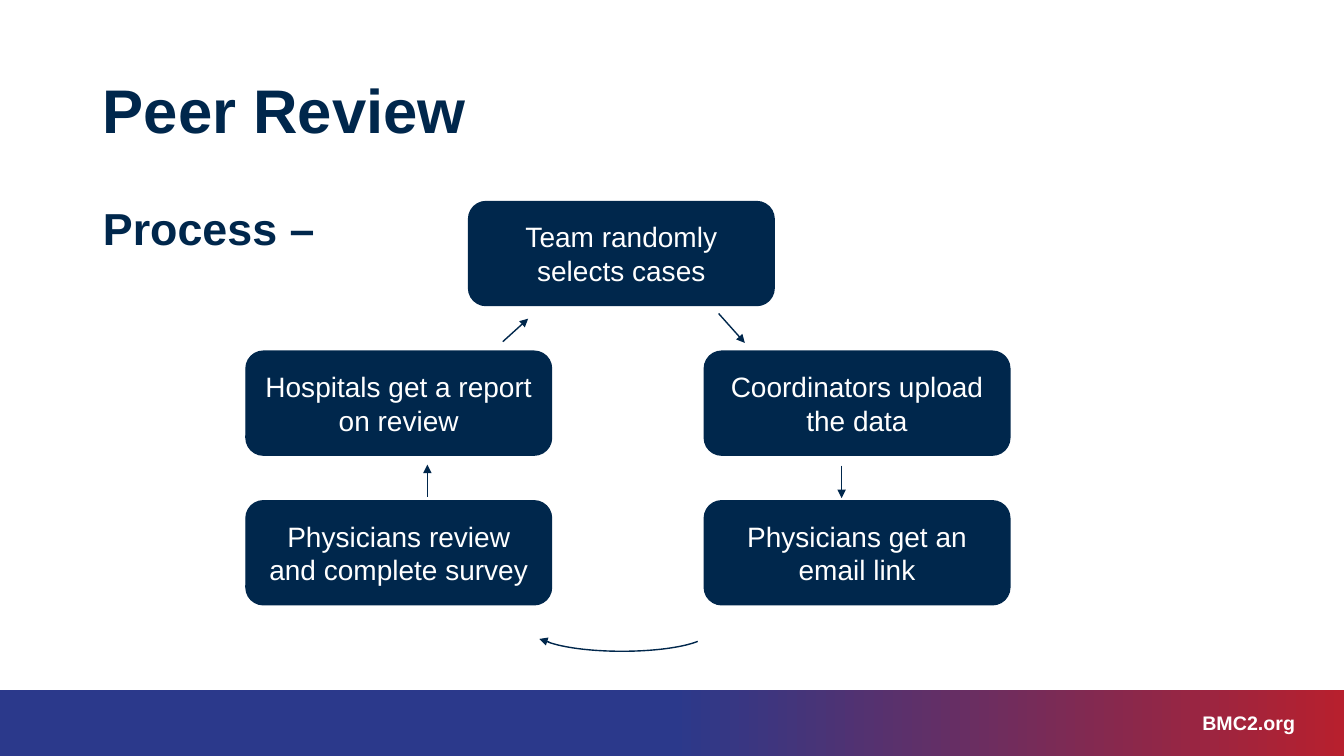
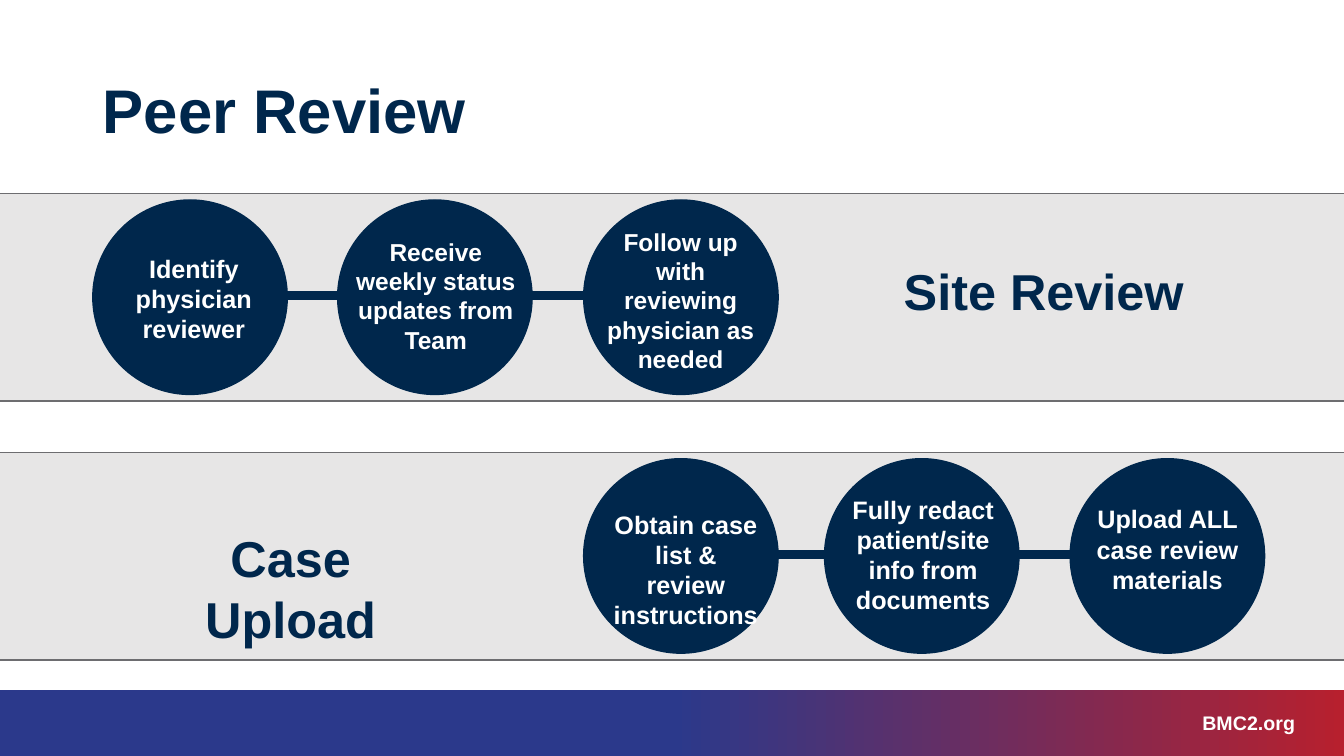
from dataclasses import dataclass
from itertools import pairwise

from lxml.etree import SubElement
from pptx import Presentation
from pptx.dml.color import RGBColor
from pptx.enum.shapes import MSO_CONNECTOR, MSO_SHAPE
from pptx.enum.text import MSO_ANCHOR, MSO_AUTO_SIZE, PP_ALIGN
from pptx.oxml.ns import qn
from pptx.util import Cm, Pt

# Shared style
FONT = "Arial"
NAVY, WHITE = "00274C", "FFFFFF"
BAND_BLUE, BAND_RED = "2B398B", "B7202E"
STRIP_FILL, STRIP_LINE = "E7E6E6", "6D6D70"
PAGE_WIDTH, PAGE_HEIGHT = 33.87, 19.05
BAND_TOP = 17.4
DIAMETER = 4.9


@dataclass(frozen=True)
class Area:
    """A rectangle in centimetres."""
    left: float
    top: float
    width: float
    height: float

    def lengths(self) -> tuple:
        return Cm(self.left), Cm(self.top), Cm(self.width), Cm(self.height)


@dataclass(frozen=True)
class Step:
    """A process circle and the place of its caption."""
    left: float
    text: str
    caption: Area
    size: float = 18


@dataclass(frozen=True)
class Strip:
    """A grey strip with a heading and linked circles."""
    top: float
    heading: str
    heading_area: Area
    steps: tuple[Step, ...]


TITLE_AREA = Area(2.34, 1.02, 29.21, 3.68)
BODY_AREA = Area(2.34, 5.08, 29.21, 12.09)

# Cycle on the first slide
BOX_WIDTH, BOX_HEIGHT = 7.7, 2.62
LEFT_COLUMN, MIDDLE_COLUMN, RIGHT_COLUMN = 6.2, 11.81, 17.75
FIRST_ROW, ROW_PITCH = 5.08, 3.77
CYCLE = (
    (MIDDLE_COLUMN, 0, "Team randomly selects cases"),
    (RIGHT_COLUMN, 1, "Coordinators upload the data"),
    (RIGHT_COLUMN, 2, "Physicians get an email link"),
    (LEFT_COLUMN, 2, "Physicians review and complete survey"),
    (LEFT_COLUMN, 1, "Hospitals get a report on review"),
)
ARROWS = (
    (18.11, 7.9, 18.77, 8.64),
    (12.67, 8.61, 13.31, 8.03),
    (21.21, 11.73, 21.21, 12.55),
    (10.77, 12.52, 10.77, 11.71),
    (13.84, 16.18, 13.59, 16.1),
)

# Strips on the second slide
STRIPS = (
    Strip(4.88, "Site Review", Area(22.23, 6.43, 8.15, 1.8), (
        Step(2.34, "Identify physician reviewer",
             Area(2.69, 6.25, 4.39, 2.57)),
        Step(8.51, "Receive weekly status updates from Team",
             Area(8.66, 5.84, 4.65, 3.25), 17.5),
        Step(14.71, "Follow up with reviewing physician as needed",
             Area(14.83, 5.59, 4.65, 3.99), 17.5),
    )),
    Strip(11.4, "Case Upload", Area(3.25, 13.16, 8.15, 1.8), (
        Step(14.71, "Obtain case list & review instructions",
             Area(15.19, 12.7, 4.19, 2.57)),
        Step(20.78, "Fully redact patient/site info from documents",
             Area(20.93, 12.32, 4.67, 3.33)),
        Step(26.97, "Upload ALL case review materials",
             Area(27.25, 12.57, 4.34, 2.57)),
    )),
)


def color(value: str) -> RGBColor:
    return RGBColor.from_string(value)


def write(box, text: str, *, size: float, fill: str = NAVY, bold: bool = False,
          align=PP_ALIGN.LEFT, anchor=MSO_ANCHOR.TOP, spacing: float = 1.0,
          plain: bool = False) -> None:
    """Fill a shape with one formatted paragraph; plain removes the bullet."""
    frame = box.text_frame
    frame.word_wrap = True
    frame.auto_size = MSO_AUTO_SIZE.NONE
    frame.vertical_anchor = anchor
    para = frame.paragraphs[0]
    para.alignment = align
    para.line_spacing = spacing
    para.space_before = Pt(0)
    if plain:
        properties = para._p.get_or_add_pPr()
        properties.set("marL", "0")
        properties.set("indent", "0")
        SubElement(properties, qn("a:buNone"))
    span = para.add_run()
    span.text = text
    span.font.name = FONT
    span.font.size = Pt(size)
    span.font.bold = bold
    span.font.color.rgb = color(fill)


def add_block(page, kind, area: Area, fill: str = NAVY, line: str = NAVY):
    block = page.shapes.add_shape(kind, *area.lengths())
    block.shadow.inherit = False
    block.fill.solid()
    block.fill.fore_color.rgb = color(fill)
    block.line.color.rgb = color(line)
    block.line.width = Pt(1)
    return block


def add_label(page, area: Area, text: str, **style):
    label = page.shapes.add_textbox(*area.lengths())
    write(label, text, **style)
    return label


def fill_placeholder(box, area: Area, text: str, **style) -> None:
    box.left, box.top, box.width, box.height = area.lengths()
    write(box, text, bold=True, spacing=0.9, **style)


def add_arrow(page, *ends: float) -> None:
    arrow = page.shapes.add_connector(
        MSO_CONNECTOR.STRAIGHT, *(Cm(end) for end in ends))
    arrow.line.color.rgb = color(NAVY)
    arrow.line.width = Pt(1)
    SubElement(arrow.line._get_or_add_ln(), qn("a:tailEnd"), type="triangle")
    SubElement(arrow._element.spPr, qn("a:effectLst"))


def add_page(deck, layout: int):
    page = deck.slides.add_slide(deck.slide_layouts[layout])
    fill_placeholder(page.shapes.title, TITLE_AREA, "Peer Review",
                     size=44, anchor=MSO_ANCHOR.MIDDLE)
    return page


def move_footer_to_master(deck, page) -> None:
    """Draw the band and address once and hang them on the master."""
    band = add_block(page, MSO_SHAPE.RECTANGLE,
                     Area(0, BAND_TOP, PAGE_WIDTH, PAGE_HEIGHT - BAND_TOP))
    band.line.fill.background()
    band.fill.gradient()
    band.fill.gradient_angle = 0
    stops = ((0.5, BAND_BLUE), (1, BAND_RED))
    for stop, (position, value) in zip(band.fill.gradient_stops, stops):
        stop.position = position
        stop.color.rgb = color(value)
    address = add_label(page, Area(25.93, 17.78, 6.96, 0.86), "BMC2.org",
                        size=14, fill=WHITE, bold=True, align=PP_ALIGN.RIGHT)
    tree = deck.slide_master.element.cSld.spTree
    for part in (band, address):
        tree.append(part.element)


def build_cycle(page) -> None:
    fill_placeholder(page.placeholders[1], BODY_AREA, "Process –",
                     size=32, plain=True)
    for left, row, text in CYCLE:
        area = Area(left, FIRST_ROW + row * ROW_PITCH, BOX_WIDTH, BOX_HEIGHT)
        box = add_block(page, MSO_SHAPE.ROUNDED_RECTANGLE, area)
        write(box, text, size=20, fill=WHITE, align=PP_ALIGN.CENTER,
              anchor=MSO_ANCHOR.MIDDLE)
    # Curved return path below the lower boxes
    curve = add_block(page, MSO_SHAPE.ARC, Area(13.49, 15.44, 4.37, 0.97),
                      fill=WHITE)
    curve.rotation = 180
    curve.adjustments[0] = 112.24
    curve.adjustments[1] = 211.4
    for ends in ARROWS:
        add_arrow(page, *ends)


def build_strip(page, strip: Strip) -> None:
    add_block(page, MSO_SHAPE.RECTANGLE, Area(-0.38, strip.top, 34.6, 5.23),
              fill=STRIP_FILL, line=STRIP_LINE)
    # Bars bridge the gaps between neighbouring circles
    for step, following in pairwise(strip.steps):
        start = step.left + DIAMETER - 0.1
        add_block(page, MSO_SHAPE.RECTANGLE,
                  Area(start, strip.top + 2.48,
                       following.left + 0.1 - start, 0.18))
    for step in strip.steps:
        add_block(page, MSO_SHAPE.OVAL,
                  Area(step.left, strip.top + 0.16, DIAMETER, DIAMETER))
        add_label(page, step.caption, step.text, size=step.size, fill=WHITE,
                  bold=True, align=PP_ALIGN.CENTER)
    add_label(page, strip.heading_area, strip.heading, size=36, bold=True,
              align=PP_ALIGN.CENTER)


def main() -> None:
    deck = Presentation()
    deck.slide_width, deck.slide_height = Cm(PAGE_WIDTH), Cm(PAGE_HEIGHT)
    cycle_page = add_page(deck, 1)
    move_footer_to_master(deck, cycle_page)
    build_cycle(cycle_page)
    strip_page = add_page(deck, 5)
    for strip in STRIPS:
        build_strip(strip_page, strip)
    deck.save("out.pptx")


if __name__ == "__main__":
    main()
